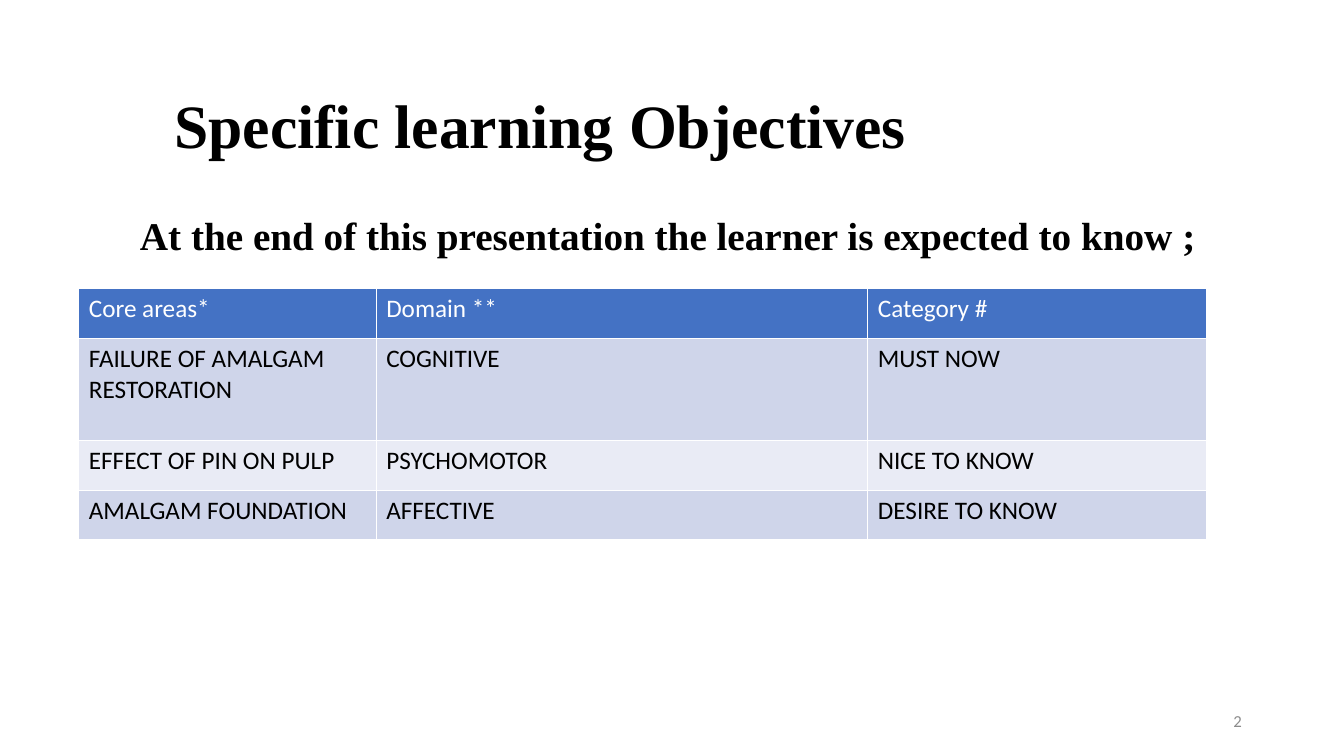
from pptx import Presentation
from pptx.dml.color import RGBColor
from pptx.enum import text
from pptx.util import Pt

BLACK = RGBColor(0x00, 0x00, 0x00)
WHITE = RGBColor(0xFF, 0xFF, 0xFF)
GREY = RGBColor(0x8C, 0x8C, 0x8C)
BLUE = RGBColor(0x44, 0x72, 0xC4)
BANDS = [RGBColor(0xE9, 0xEB, 0xF5), RGBColor(0xCF, 0xD5, 0xEA)]
SERIF, SANS = "Times New Roman", "Calibri"
LEFT, RIGHT = text.PP_ALIGN.LEFT, text.PP_ALIGN.RIGHT
TOP, MID = text.MSO_ANCHOR.TOP, text.MSO_ANCHOR.MIDDLE


def style(par, name, size, color, bold=False):
    look = {"name": name, "size": Pt(size), "bold": bold}
    for key, val in look.items():
        setattr(par.font, key, val)
    par.font.color.rgb = color


deck = Presentation()
deck.slide_width, deck.slide_height = Pt(960), Pt(540)
slide = deck.slides.add_slide(deck.slide_layouts[6])

# Title, lead-in and page number
labels = [
    ("Specific learning Objectives", (117.4, 48.2, 729.4, 87.1),
     (SERIF, 44, BLACK, True), LEFT, MID, 0.9),
    ("At the end of this presentation the learner is expected to know ;",
     (92.9, 147.6, 771.1, 41), (SERIF, 28, BLACK, True), LEFT, TOP, 1),
    ("2", (678.2, 500.4, 216, 28.8), (SANS, 12, GREY), RIGHT, MID, 1),
]
for words, box, look, align, anchor, space in labels:
    frame = slide.shapes.add_textbox(*map(Pt, box)).text_frame
    frame.word_wrap = True
    frame.vertical_anchor = anchor
    par = frame.paragraphs[0]
    par.text = words
    par.alignment = align
    par.line_spacing = space
    style(par, *look)

# Objectives table
rows = [
    ("Core areas*", "Domain **", "Category #"),
    ("FAILURE OF AMALGAM RESTORATION", "COGNITIVE", "MUST NOW"),
    ("EFFECT OF PIN ON PULP", "PSYCHOMOTOR", "NICE TO KNOW"),
    ("AMALGAM FOUNDATION", "AFFECTIVE", "DESIRE TO KNOW"),
]
widths = [212.4, 351.2, 242]
heights = [35.6, 72.9, 35.6, 35.6]
table = slide.shapes.add_table(
    len(rows), len(widths), Pt(56.3), Pt(206.1),
    Pt(sum(widths)), Pt(sum(heights))).table
for col, width in zip(table.columns, widths):
    col.width = Pt(width)
for r, line in enumerate(rows):
    table.rows[r].height = Pt(heights[r])
    for c, words in enumerate(line):
        cell = table.cell(r, c)
        cell.text = words
        cell.fill.solid()
        cell.fill.fore_color.rgb = BANDS[r % 2] if r else BLUE
        style(cell.text_frame.paragraphs[0], SANS, 18, BLACK if r else WHITE)

deck.save("out.pptx")
